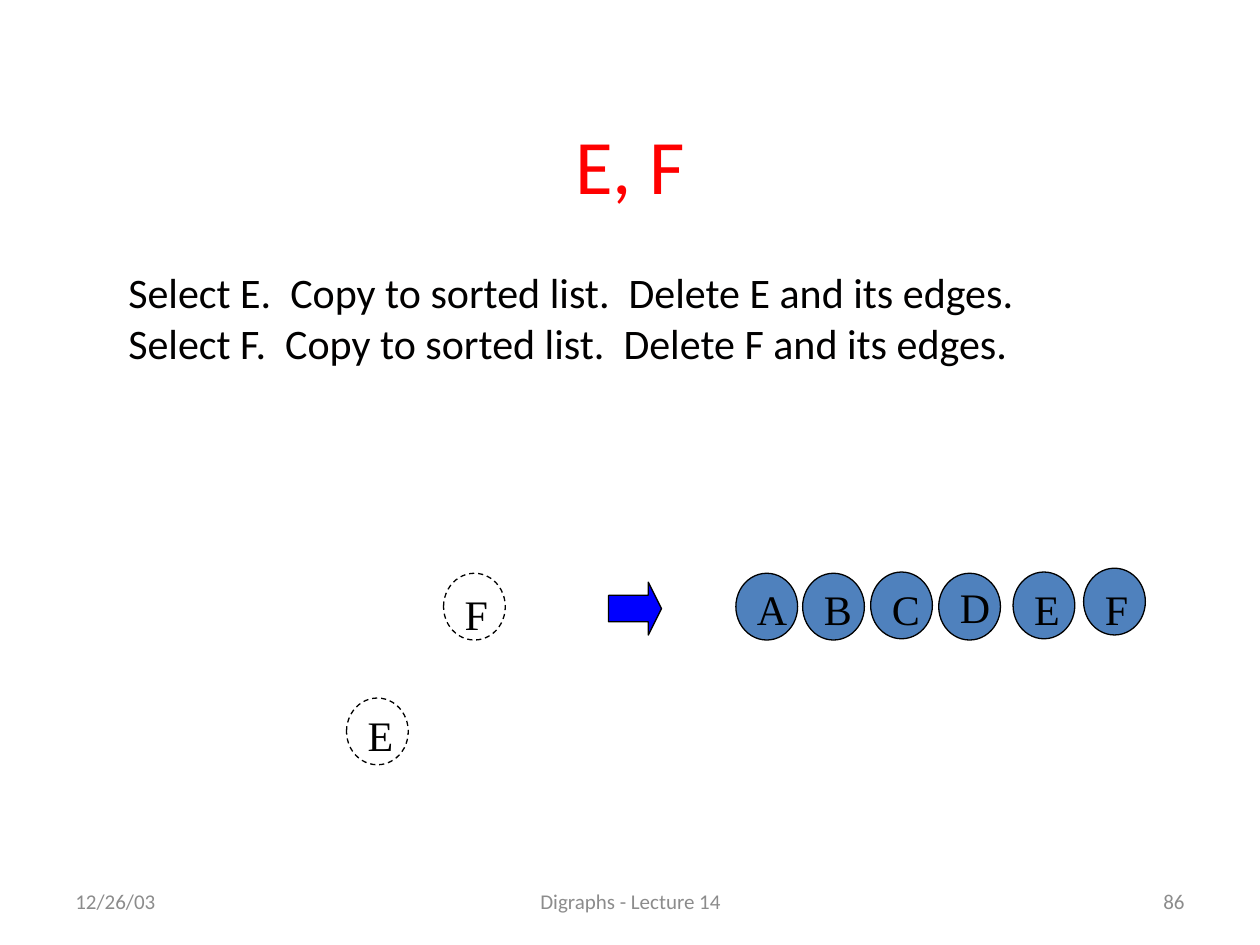
"""Build the slide on sorting the last two nodes, E and F, of a digraph."""
from dataclasses import dataclass

from lxml import etree
from pptx import Presentation
from pptx import util as u
from pptx.dml.color import RGBColor
from pptx.enum import dml, shapes, text
from pptx.oxml.ns import qn

BLACK = RGBColor(0x00, 0x00, 0x00)
INK = RGBColor(0x01, 0x00, 0x00)
RED = RGBColor(0xFF, 0x00, 0x00)
BLUE = RGBColor(0x00, 0x00, 0xFF)
STEEL = RGBColor(0x4F, 0x81, 0xBD)
GRAY = RGBColor(0x8C, 0x8C, 0x8C)

LEFT, MID, RIGHT = text.PP_ALIGN.LEFT, text.PP_ALIGN.CENTER, text.PP_ALIGN.RIGHT
NODE_W, NODE_H = 0.49, 0.53


@dataclass(frozen=True)
class Node:
    """A lettered graph node; a sorted one is filled, a deleted one dashed."""
    name: str
    x: float
    y: float
    text_y: float
    done: bool = True


@dataclass(frozen=True)
class Foot:
    """One part of the footer line."""
    words: str
    x: float
    width: float
    align: text.PP_ALIGN


NODES = [
    Node("F", 3.52, 4.55, 4.62, done=False),
    Node("E", 2.75, 5.54, 5.58, done=False),
    Node("A", 5.84, 4.55, 4.58),
    Node("B", 6.37, 4.55, 4.58),
    Node("C", 6.91, 4.54, 4.58),
    Node("D", 7.45, 4.55, 4.57),
    Node("E", 8.04, 4.54, 4.58),
    Node("F", 8.6, 4.51, 4.58),
]
FEET = [
    Foot("12/26/03", 0.5, 2.33, LEFT),
    Foot("Digraphs - Lecture 14", 3.42, 3.17, MID),
    Foot("86", 7.17, 2.33, RIGHT),
]
STEPS = [f"Select {name}.  Copy to sorted list.  Delete {name} and its edges."
         for name in "EF"]


def place(x: float, y: float, width: float, height: float) -> list[u.Length]:
    """Turn a box in inches into lengths."""
    return [u.Inches(size) for size in (x, y, width, height)]


def add_text(slide, lines: list[str], box: list[u.Length], *, size: int = 24,
             color: RGBColor = BLACK, font: str = "Calibri",
             align: text.PP_ALIGN = LEFT, grow: bool = False,
             before: int = 0) -> None:
    """Add a text box; before is the space above a paragraph in percent."""
    frame = slide.shapes.add_textbox(*box).text_frame
    frame.word_wrap = True
    if grow:
        frame.auto_size = text.MSO_AUTO_SIZE.SHAPE_TO_FIT_TEXT
    else:
        frame.vertical_anchor = text.MSO_ANCHOR.MIDDLE
    for i, line in enumerate(lines):
        para = frame.add_paragraph() if i else frame.paragraphs[0]
        para.alignment = align
        if before:
            space = etree.SubElement(para._p.get_or_add_pPr(), qn("a:spcBef"))
            etree.SubElement(space, qn("a:spcPct"), val=str(before * 1000))
        run = para.add_run()
        run.text = line
        run.font.size = u.Pt(size)
        run.font.name = font
        run.font.color.rgb = color


def add_shape(slide, kind: shapes.MSO_SHAPE, box: list[u.Length],
              fill: RGBColor | None):
    """Add an outlined shape, dashed when it has no fill."""
    shape = slide.shapes.add_shape(kind, *box)
    shape.shadow.inherit = False
    shape.line.color.rgb = BLACK
    shape.line.width = u.Pt(0.75)
    if fill is None:
        shape.fill.background()
        shape.line.dash_style = dml.MSO_LINE.DASH
    else:
        shape.fill.solid()
        shape.fill.fore_color.rgb = fill
    return shape


def add_node(slide, node: Node) -> None:
    """Draw a node and its letter."""
    add_shape(slide, shapes.MSO_SHAPE.OVAL, place(node.x, node.y, NODE_W, NODE_H),
              STEEL if node.done else None)
    add_text(slide, [node.name], place(node.x + 0.07, node.text_y, 0.33, 0.5),
             font="Times New Roman", grow=True, before=50)


def main() -> None:
    """Draw and save the slide."""
    deck = Presentation()
    deck.slide_width, deck.slide_height = u.Inches(10), u.Inches(7.5)
    slide = deck.slides.add_slide(deck.slide_layouts[6])
    for foot in FEET:
        add_text(slide, [foot.words], place(foot.x, 6.95, foot.width, 0.4),
                 size=12, color=GRAY, align=foot.align)
    for node in NODES:
        add_node(slide, node)
    arrow = add_shape(slide, shapes.MSO_SHAPE.RIGHT_ARROW,
                      place(4.83, 4.62, 0.42, 0.42), BLUE)
    arrow.adjustments[0], arrow.adjustments[1] = 0.5, 0.25
    add_text(slide, STEPS, place(0.92, 2.07, 8.33, 0.9), color=INK, grow=True)
    add_text(slide, ["E, F"], place(0.75, 0.67, 8.5, 1.25), size=44, color=RED,
             align=MID)
    deck.save("out.pptx")


if __name__ == "__main__":
    main()
